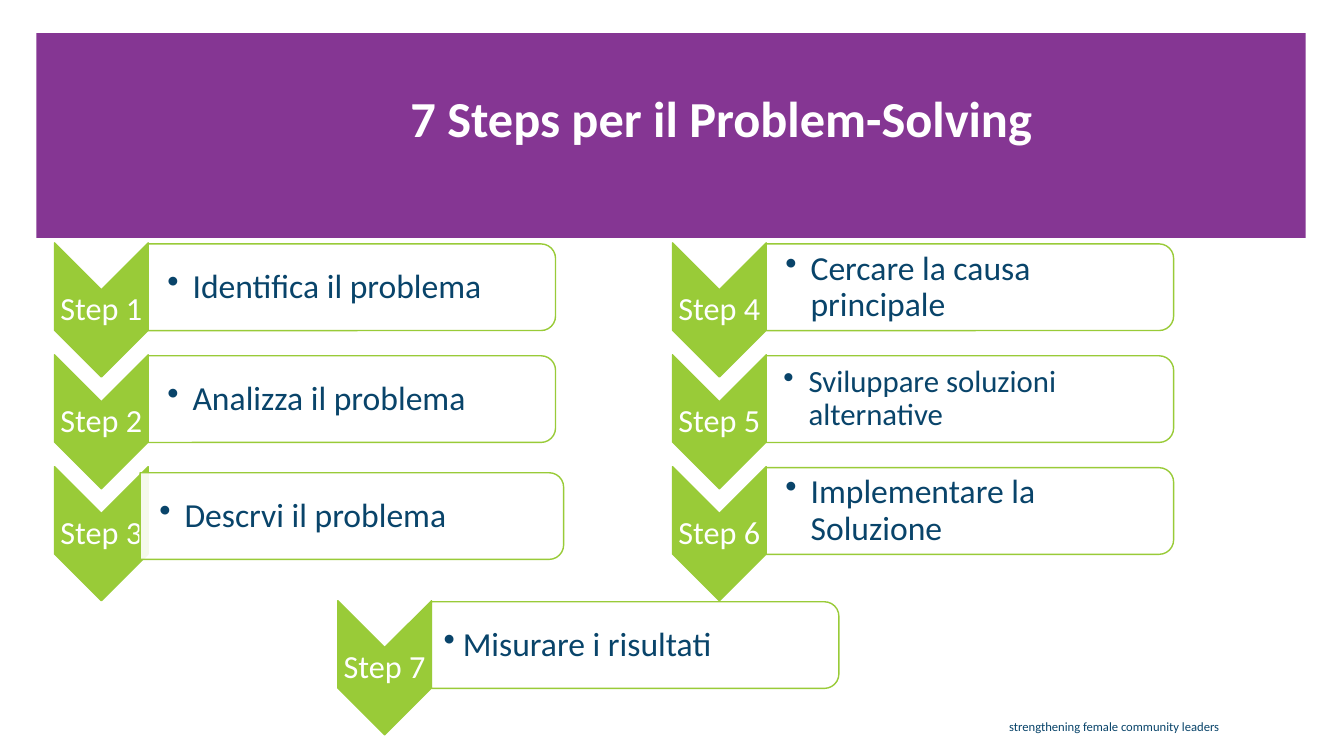
import pptx
import pptx.dml.color
import pptx.enum.shapes
import pptx.enum.text
import pptx.oxml
import pptx.oxml.ns
import pptx.util

Inches = pptx.util.Inches
Pt = pptx.util.Pt
RGBColor = pptx.dml.color.RGBColor
Shape = pptx.enum.shapes.MSO_SHAPE
Align = pptx.enum.text.PP_ALIGN
Anchor = pptx.enum.text.MSO_ANCHOR

# Content
TITLE = "7 Steps per il Problem-Solving"
FOOTER = "strengthening female community leaders"
COLUMNS = [
    (0.54, ["Identifica il problema", "Analizza il problema", "Descrvi il problema"]),
    (6.67, ["Cercare la causa principale", "Sviluppare soluzioni alternative",
            "Implementare la Soluzione"]),
]
LAST_STEP = (3.35, 5.96, "Misurare i risultati")

# Steps that differ from the usual bar and text format
SPECIAL = {
    3: {"shift": -0.08, "drop": 0.05, "bar_width": 4.2},
    5: {"size": 22, "inset": 0.17},
    7: {"indent": 0.19, "inset": 0.12},
}
USUAL = {"shift": 0, "drop": 0, "bar_width": 4.04, "size": 24, "inset": 0.19, "indent": 0.25}

# Colours and measures in inches
PURPLE = RGBColor(0x85, 0x36, 0x93)
GREEN = RGBColor(0x99, 0xCB, 0x38)
NAVY = RGBColor(0x09, 0x44, 0x6A)
WHITE = RGBColor(0xFF, 0xFF, 0xFF)
FIRST_TOP, ROW_PITCH = 2.41, 1.11
CHEVRON_WIDTH, CHEVRON_HEIGHT = 0.93, 1.33
LABEL_HEIGHT, BAR_HEIGHT, TEXT_HEIGHT = 0.4, 0.86, 0.78

presentation = pptx.Presentation()
presentation.slide_width = Inches(13.33)
presentation.slide_height = Inches(7.5)
slide = presentation.slides.add_slide(presentation.slide_layouts[5])


def set_all(target, values):
    for name, value in values.items():
        setattr(target, name, value)


def write(shape, text, size, color, bold=False, align=Align.LEFT, spacing=0.9,
          anchor=Anchor.TOP, margins=(0.1, 0.05, 0.1, 0.05), indent=None):
    left, top, right, bottom = [Inches(margin) for margin in margins]
    frame = shape.text_frame
    set_all(frame, {"word_wrap": True, "auto_size": pptx.enum.text.MSO_AUTO_SIZE.NONE,
                    "vertical_anchor": anchor, "margin_left": left, "margin_top": top,
                    "margin_right": right, "margin_bottom": bottom})
    paragraph = frame.paragraphs[0]
    paragraph.text = text
    set_all(paragraph, {"alignment": align, "line_spacing": spacing})
    if indent:
        properties = paragraph._p.get_or_add_pPr()
        properties.set("marL", str(Inches(indent)))
        properties.set("indent", str(-Inches(indent)))
        bullet = pptx.oxml.parse_xml(
            f'<a:buChar {pptx.oxml.ns.nsdecls("a")} char="•"/>')
        properties.append(bullet)
    set_all(paragraph.font, {"name": "Calibri", "size": Pt(size), "bold": bold})
    paragraph.font.color.rgb = color


def add_textbox(left, top, width, height, *args, **options):
    box = slide.shapes.add_textbox(*[Inches(value) for value in (left, top, width, height)])
    write(box, *args, **options)


def add_filled(kind, left, top, width, height, fill, line=None, turned=False):
    """Place a shape by its visible frame, even when it is turned by 90 degrees."""
    if turned:
        left, top = left + (width - height) / 2, top + (height - width) / 2
        width, height = height, width
    shape = slide.shapes.add_shape(
        kind, *[Inches(value) for value in (left, top, width, height)])
    shape.shadow.inherit = False
    shape.rotation = 90 if turned else 0
    shape.fill.solid()
    shape.fill.fore_color.rgb = fill
    if line is None:
        shape.line.fill.background()
    else:
        shape.line.color.rgb = line
        shape.line.width = Pt(1)
    return shape


def add_step(number, left, top, text):
    style = USUAL | SPECIAL.get(number, {})

    # Chevron with its label
    add_filled(Shape.CHEVRON, left, top, CHEVRON_WIDTH, CHEVRON_HEIGHT, GREEN, GREEN, True)
    add_textbox(left, top + CHEVRON_WIDTH / 2, CHEVRON_WIDTH, LABEL_HEIGHT,
                f"Step {number}", 23, WHITE, align=Align.CENTER,
                anchor=Anchor.MIDDLE, margins=[0.02] * 4)

    # Bar, slightly see-through, with its bullet
    bar_left = left + CHEVRON_WIDTH + style["shift"]
    bar_top = top + 0.01 + style["drop"]
    bar = add_filled(Shape.ROUND_2_SAME_RECTANGLE, bar_left, bar_top,
                     style["bar_width"], BAR_HEIGHT, WHITE, GREEN, True)
    color = bar.fill._xPr.find(".//" + pptx.oxml.ns.qn("a:srgbClr"))
    color.append(pptx.oxml.parse_xml(
        f'<a:alpha {pptx.oxml.ns.nsdecls("a")} val="90000"/>'))
    add_textbox(bar_left, bar_top + (BAR_HEIGHT - TEXT_HEIGHT) / 2,
                style["bar_width"] - 0.04, TEXT_HEIGHT, text, style["size"], NAVY,
                anchor=Anchor.MIDDLE, margins=(style["inset"], 0.02, 0.02, 0.02),
                indent=style["indent"])


# Banner, title and footer
banner = add_filled(Shape.RECTANGLE, 0.36, 0.33, 12.59, 2.03, PURPLE)
title = slide.shapes.title
set_all(title, {"left": Inches(3.97), "top": Inches(0.88),
                "width": Inches(6.62), "height": Inches(0.86)})
write(title, TITLE, 36, WHITE, bold=True)
banner.element.addnext(title.element)
add_textbox(1.39, 7.08, 10.8, 0.25, FOOTER, 9, NAVY, align=Align.RIGHT, spacing=1.0)

# Two columns of steps, then the last one below
number = 0
for column_left, texts in COLUMNS:
    for row, text in enumerate(texts):
        number += 1
        add_step(number, column_left, FIRST_TOP + row * ROW_PITCH, text)
add_step(number + 1, *LAST_STEP)

presentation.save("out.pptx")
